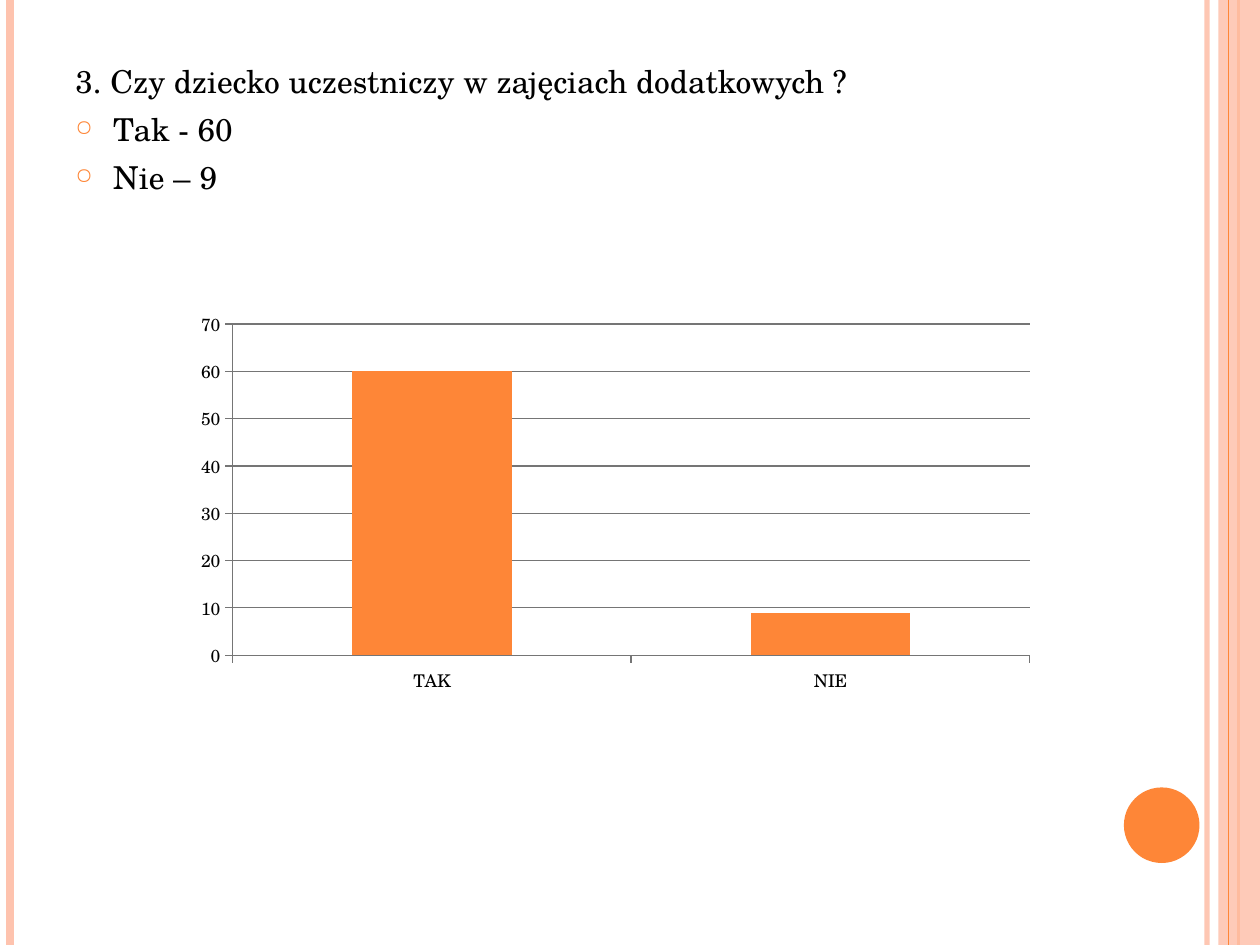
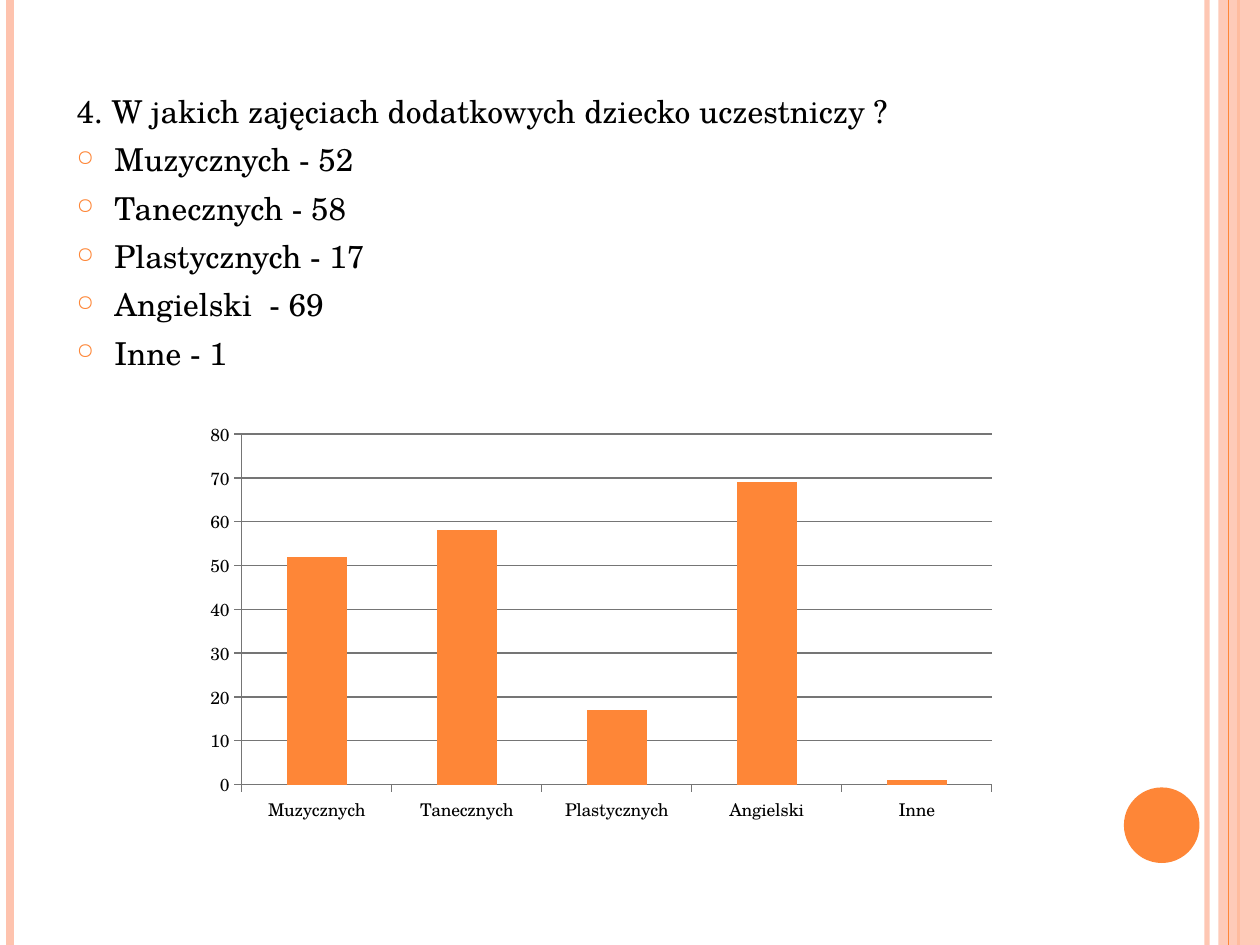
from lxml.etree import SubElement
from pptx import Presentation
from pptx.chart.data import CategoryChartData
from pptx.dml.color import RGBColor
from pptx.enum.chart import XL_CHART_TYPE, XL_TICK_MARK
from pptx.enum.shapes import MSO_CONNECTOR, MSO_SHAPE
from pptx.enum.text import MSO_ANCHOR
from pptx.oxml.ns import qn
from pptx.util import Inches, Pt

SLIDE_WIDTH, SLIDE_HEIGHT = Inches(10), Inches(7.5)
FONT = "TeX Gyre Schola"
ORANGE, PEACH, BLACK, GREY = "FE8637", "FEC3AE", "000000", "757575"

# Boxes are left, top, width, height in percent of the slide
SURVEY = [
    {
        "question": "3. Czy dziecko uczestniczy w zajęciach dodatkowych ?",
        "answers": ["Tak - 60", "Nie – 9"],
        "text_box": (5, 5.87, 85.9, 88.53),
        "bars": {"TAK": 60, "NIE": 9},
        "chart_box": (14.6, 32.13, 68.5, 42),
    },
    {
        "question": "4. W jakich zajęciach dodatkowych dziecko uczestniczy ?",
        "answers": ["Muzycznych - 52", "Tanecznych - 58", "Plastycznych - 17",
                    "Angielski  - 69", "Inne - 1"],
        "text_box": (5.1, 9.07, 81.7, 85.33),
        "bars": {"Muzycznych": 52, "Tanecznych": 58, "Plastycznych": 17,
                 "Angielski": 69, "Inne": 1},
        "chart_box": (15.4, 43.73, 64.6, 44.13),
    },
]


def color(hex_string):
    return RGBColor.from_string(hex_string)


def place(box):
    left, top, width, height = box
    return (int(SLIDE_WIDTH * left / 100), int(SLIDE_HEIGHT * top / 100),
            int(SLIDE_WIDTH * width / 100), int(SLIDE_HEIGHT * height / 100))


def set_opacity(shape, percent):
    for solid in shape.element.spPr.iter(qn("a:solidFill")):
        SubElement(solid[0], qn("a:alpha"), val=str(percent * 1000))


def add_stripe(slide, x, hex_string, points):
    left, top, _, height = place((x, 0, 0, 100))
    stripe = slide.shapes.add_connector(MSO_CONNECTOR.STRAIGHT, left, top, left, height)
    stripe.line.color.rgb = color(hex_string)
    stripe.line.width = Pt(points)
    SubElement(stripe.element.spPr, qn("a:effectLst"))
    return stripe


def add_filled(slide, kind, box, hex_string):
    shape = slide.shapes.add_shape(kind, *place(box))
    shape.shadow.inherit = False
    shape.fill.solid()
    shape.fill.fore_color.rgb = color(hex_string)
    shape.line.fill.background()
    return shape


def add_frame(slide):
    """Side stripes, right band and the orange dot."""
    set_opacity(add_stripe(slide, 95.8, PEACH, 3), 93)
    add_stripe(slide, 0.8, PEACH, 4.5)
    add_stripe(slide, 98.3, ORANGE, 1.5)
    set_opacity(add_filled(slide, MSO_SHAPE.RECTANGLE, (96.7, 0, 3.3, 100), PEACH), 87)
    add_stripe(slide, 97.5, ORANGE, 0.75)
    add_filled(slide, MSO_SHAPE.OVAL, (89.2, 83.33, 6, 8), ORANGE)


def add_bullet(paragraph):
    properties = paragraph._p.get_or_add_pPr()
    properties.set("marL", str(Inches(0.3)))
    properties.set("indent", str(-Inches(0.3)))
    bullet_color = SubElement(properties, qn("a:buClr"))
    SubElement(bullet_color, qn("a:srgbClr"), val=ORANGE)
    SubElement(properties, qn("a:buSzPct"), val="70000")
    SubElement(properties, qn("a:buChar"), char="○")


def add_question(slide, box, question, answers):
    text_frame = slide.shapes.add_textbox(*place(box)).text_frame
    text_frame.word_wrap = True
    text_frame.vertical_anchor = MSO_ANCHOR.TOP
    text_frame.text = "\n".join([question, *answers])
    for paragraph in text_frame.paragraphs:
        paragraph.space_before = Pt(6)
        font = paragraph.runs[0].font
        font.name, font.size = FONT, Pt(18)
        font.color.rgb = color(BLACK)
    for paragraph in text_frame.paragraphs[1:]:
        add_bullet(paragraph)


def add_bar_chart(slide, box, bars):
    data = CategoryChartData()
    data.categories = list(bars)
    data.add_series("Series 1", list(bars.values()))
    chart = slide.shapes.add_chart(XL_CHART_TYPE.COLUMN_STACKED, *place(box), data).chart
    chart.has_legend = chart.has_title = False
    chart.font.name, chart.font.size = FONT, Pt(10)
    chart.font.color.rgb = color(BLACK)

    # Columns
    plot = chart.plots[0]
    plot.vary_by_categories = False
    plot.gap_width, plot.overlap = 150, 100
    fill = plot.series[0].format.fill
    fill.solid()
    fill.fore_color.rgb = color(ORANGE)

    # Axes and gridlines
    chart.value_axis.has_major_gridlines = True
    axes = (chart.category_axis, chart.value_axis)
    for axis in axes:
        axis.major_tick_mark = XL_TICK_MARK.OUTSIDE
    for part in (*axes, chart.value_axis.major_gridlines):
        part.format.line.color.rgb = color(GREY)
        part.format.line.width = Pt(0.75)


def add_survey_slide(presentation, item):
    slide = presentation.slides.add_slide(presentation.slide_layouts[6])
    add_frame(slide)
    add_question(slide, item["text_box"], item["question"], item["answers"])
    add_bar_chart(slide, item["chart_box"], item["bars"])


def main():
    presentation = Presentation()
    presentation.slide_width, presentation.slide_height = SLIDE_WIDTH, SLIDE_HEIGHT
    for item in SURVEY:
        add_survey_slide(presentation, item)
    presentation.save("out.pptx")


if __name__ == "__main__":
    main()
